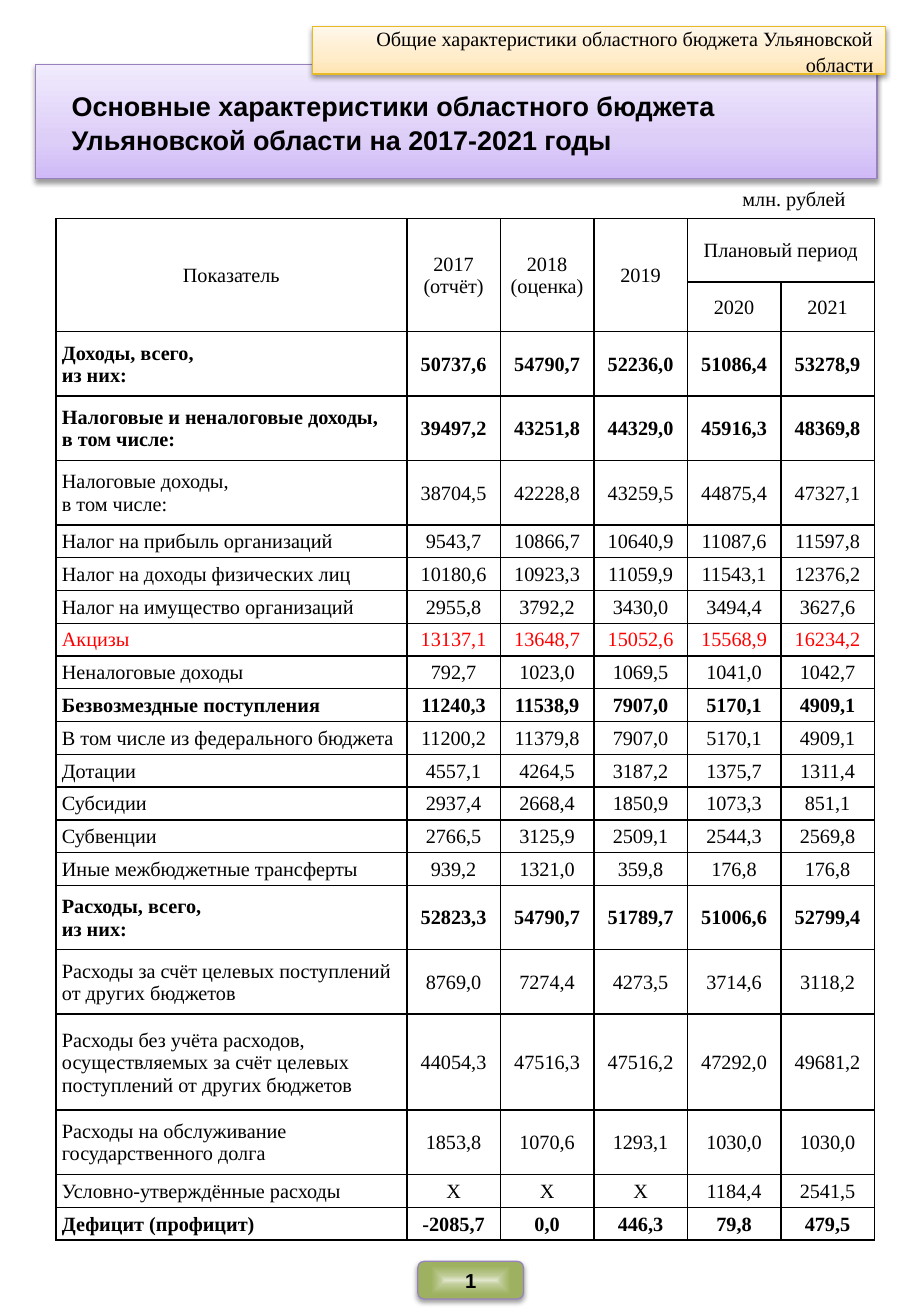
from lxml import etree
from pptx import Presentation
from pptx.dml.color import RGBColor
from pptx.enum.shapes import MSO_SHAPE
from pptx.enum.text import MSO_ANCHOR, MSO_AUTO_SIZE, PP_ALIGN
from pptx.oxml import parse_xml
from pptx.util import Inches, Pt

BLACK = RGBColor(0x00, 0x00, 0x00)
RED = RGBColor(0xFF, 0x00, 0x00)
VIOLET = RGBColor(0x98, 0x81, 0xBD)
GOLD = RGBColor(0xE7, 0xBA, 0x23)
VIOLET_STOPS = [(0, RGBColor(0xCF, 0xBA, 0xF7)), (35, RGBColor(0xDD, 0xCE, 0xF8)),
                (100, RGBColor(0xF1, 0xEB, 0xFD))]
GOLD_STOPS = [(0, RGBColor(0xFF, 0xE4, 0xB2)), (35, RGBColor(0xFF, 0xEC, 0xC9)),
              (100, RGBColor(0xFF, 0xF7, 0xEA))]
GREEN_STOPS = [(0, RGBColor(0xDF, 0xE5, 0xCA)), (25, RGBColor(0xBE, 0xCB, 0x95)),
               (75, RGBColor(0x9E, 0xB1, 0x60)), (100, RGBColor(0x9E, 0xB1, 0x60))]
LEFT, CENTER, RIGHT = PP_ALIGN.LEFT, PP_ALIGN.CENTER, PP_ALIGN.RIGHT
MIDDLE = MSO_ANCHOR.MIDDLE
SERIF, SANS = "Times New Roman", "Arial"
NS = "http://schemas.openxmlformats.org/drawingml/2006/main"
UPWARD = '<a:lin ang="16200000" scaled="0"/>'
FROM_CENTER = ('<a:path path="rect"><a:fillToRect l="50000" t="50000" r="50000" b="50000"/>'
               '</a:path>')


def style_panel(panel, stops, direction, outline):
    properties = panel._element.spPr
    colors = "".join(f'<a:gs pos="{position * 1000}"><a:srgbClr val="{color}"/></a:gs>'
                     for position, color in stops)
    properties.append(parse_xml(f'<a:gradFill xmlns:a="{NS}" rotWithShape="1">'
                                f'<a:gsLst>{colors}</a:gsLst>{direction}</a:gradFill>'))
    panel.line.color.rgb = outline
    panel.line.width = Pt(0.75)
    properties.append(parse_xml(
        f'<a:effectLst xmlns:a="{NS}"><a:outerShdw blurRad="{Pt(3.1)}" dist="{Pt(1.6)}" '
        'dir="5400000" rotWithShape="0"><a:srgbClr val="000000"><a:alpha val="38000"/>'
        '</a:srgbClr></a:outerShdw></a:effectLst>'))


def write(frame, text, align, size=12, font=SERIF, bold=False, color=BLACK, indent=0):
    frame.word_wrap = True
    paragraph = frame.paragraphs[0]
    paragraph.alignment = align
    if indent:
        paragraph._p.get_or_add_pPr().set("marL", str(Inches(indent)))
    for number, line in enumerate(text.split("\n")):
        if number:
            paragraph.add_line_break()
        run = paragraph.add_run()
        run.text = line
        run.font.size = Pt(size)
        run.font.name = font
        run.font.bold = bold
        run.font.color.rgb = color
    return paragraph


prs = Presentation()
prs.slide_width, prs.slide_height = Inches(7.5), Inches(10.83)
slide = prs.slides.add_slide(prs.slide_layouts[5])
shapes = slide.shapes

title = shapes.title
title.left, title.top = Inches(0.29), Inches(0.53)
title.width, title.height = Inches(6.93), Inches(0.94)
style_panel(title, VIOLET_STOPS, UPWARD, VIOLET)
title.text_frame.auto_size = MSO_AUTO_SIZE.NONE
title.text_frame.vertical_anchor = MIDDLE
heading = write(title.text_frame,
                "Основные характеристики областного бюджета Ульяновской области на 2017-2021 годы",
                LEFT, 16, SANS, True, indent=0.2)
heading.line_spacing = 1.07

page_box = Inches(3.44), Inches(10.38), Inches(0.87), Inches(0.31)
page_badge = shapes.add_shape(MSO_SHAPE.FLOWCHART_ALTERNATE_PROCESS, *page_box)
style_panel(page_badge, GREEN_STOPS, FROM_CENTER, VIOLET)
page_number = shapes.add_textbox(*page_box).text_frame
page_number.vertical_anchor = MIDDLE
write(page_number, "1", CENTER, font=SANS, bold=True)

section = shapes.add_shape(MSO_SHAPE.RECTANGLE, Inches(2.57), Inches(0.22),
                           Inches(4.72), Inches(0.39))
style_panel(section, GOLD_STOPS, UPWARD, GOLD)
section.text_frame.vertical_anchor = MIDDLE
section_name = write(section.text_frame,
                     "Общие характеристики областного бюджета Ульяновской области",
                     RIGHT, indent=0.12)
section_name.line_spacing = 1.07

unit = shapes.add_textbox(Inches(5.64), Inches(1.48), Inches(1.42), Inches(0.3))
write(unit.text_frame, "млн. рублей", RIGHT)

ONE, TWO, THREE = 0.27, 0.53, 0.79
budget_rows = [
    (0.52, "Показатель", ["2017 (отчёт)", "2018 (оценка)", "2019", "Плановый период", ""]),
    (0.41, "", ["", "", "", "2020", "2021"]),
    (TWO, "Доходы, всего,\nиз них:", "50737,6 54790,7 52236,0 51086,4 53278,9".split()),
    (TWO, "Налоговые и неналоговые доходы,\nв том числе:",
     "39497,2 43251,8 44329,0 45916,3 48369,8".split()),
    (TWO, "Налоговые доходы,\nв том числе:", "38704,5 42228,8 43259,5 44875,4 47327,1".split()),
    (ONE, "Налог на прибыль организаций", "9543,7 10866,7 10640,9 11087,6 11597,8".split()),
    (ONE, "Налог на доходы физических лиц", "10180,6 10923,3 11059,9 11543,1 12376,2".split()),
    (ONE, "Налог на имущество организаций", "2955,8 3792,2 3430,0 3494,4 3627,6".split()),
    (ONE, "Акцизы", "13137,1 13648,7 15052,6 15568,9 16234,2".split()),
    (ONE, "Неналоговые доходы", "792,7 1023,0 1069,5 1041,0 1042,7".split()),
    (ONE, "Безвозмездные поступления", "11240,3 11538,9 7907,0 5170,1 4909,1".split()),
    (ONE, "В том числе из федерального бюджета", "11200,2 11379,8 7907,0 5170,1 4909,1".split()),
    (ONE, "Дотации", "4557,1 4264,5 3187,2 1375,7 1311,4".split()),
    (ONE, "Субсидии", "2937,4 2668,4 1850,9 1073,3 851,1".split()),
    (ONE, "Субвенции", "2766,5 3125,9 2509,1 2544,3 2569,8".split()),
    (ONE, "Иные межбюджетные трансферты", "939,2 1321,0 359,8 176,8 176,8".split()),
    (TWO, "Расходы, всего,\nиз них:", "52823,3 54790,7 51789,7 51006,6 52799,4".split()),
    (TWO, "Расходы за счёт целевых поступлений от других бюджетов",
     "8769,0 7274,4 4273,5 3714,6 3118,2".split()),
    (THREE, "Расходы без учёта расходов, осуществляемых за счёт целевых поступлений "
     "от других бюджетов", "44054,3 47516,3 47516,2 47292,0 49681,2".split()),
    (TWO, "Расходы на обслуживание государственного долга",
     "1853,8 1070,6 1293,1 1030,0 1030,0".split()),
    (ONE, "Условно-утверждённые расходы", "Х Х Х 1184,4 2541,5".split()),
    (ONE, "Дефицит (профицит)", "-2085,7 0,0 446,3 79,8 479,5".split()),
]
TOTAL_ROWS = {2, 3, 10, 16, 21}
EXCISE_ROW = 8

budget = shapes.add_table(len(budget_rows), 6, Inches(0.46), Inches(1.8), Inches(6.75),
                          Inches(sum(height for height, _, _ in budget_rows))).table
budget.first_row = budget.horz_banding = False
for number, column in enumerate(budget.columns):
    column.width = Inches(0.77 if number else 2.89)

for r, (height, indicator, values) in enumerate(budget_rows):
    budget.rows[r].height = Inches(height)
    for c, text in enumerate([indicator, *values]):
        cell = budget.cell(r, c)
        cell.margin_left = cell.margin_top = cell.margin_right = Inches(0.01)
        cell.margin_bottom = 0
        cell.vertical_anchor = MIDDLE
        cell_properties = cell._tc.get_or_add_tcPr()
        for side in ("lnL", "lnR", "lnT", "lnB"):
            border = etree.SubElement(cell_properties, f"{{{NS}}}{side}", w=str(Pt(1)))
            fill = etree.SubElement(border, f"{{{NS}}}solidFill")
            etree.SubElement(fill, f"{{{NS}}}srgbClr", val=str(BLACK))
        cell.fill.background()
        if text:
            is_label = c == 0 and r > 1
            write(cell.text_frame, text, LEFT if is_label else CENTER,
                  bold=r in TOTAL_ROWS, color=RED if r == EXCISE_ROW else BLACK,
                  indent=0.04 if is_label else 0)

for c in range(4):
    budget.cell(0, c).merge(budget.cell(1, c))
budget.cell(0, 4).merge(budget.cell(0, 5))

prs.save("out.pptx")
